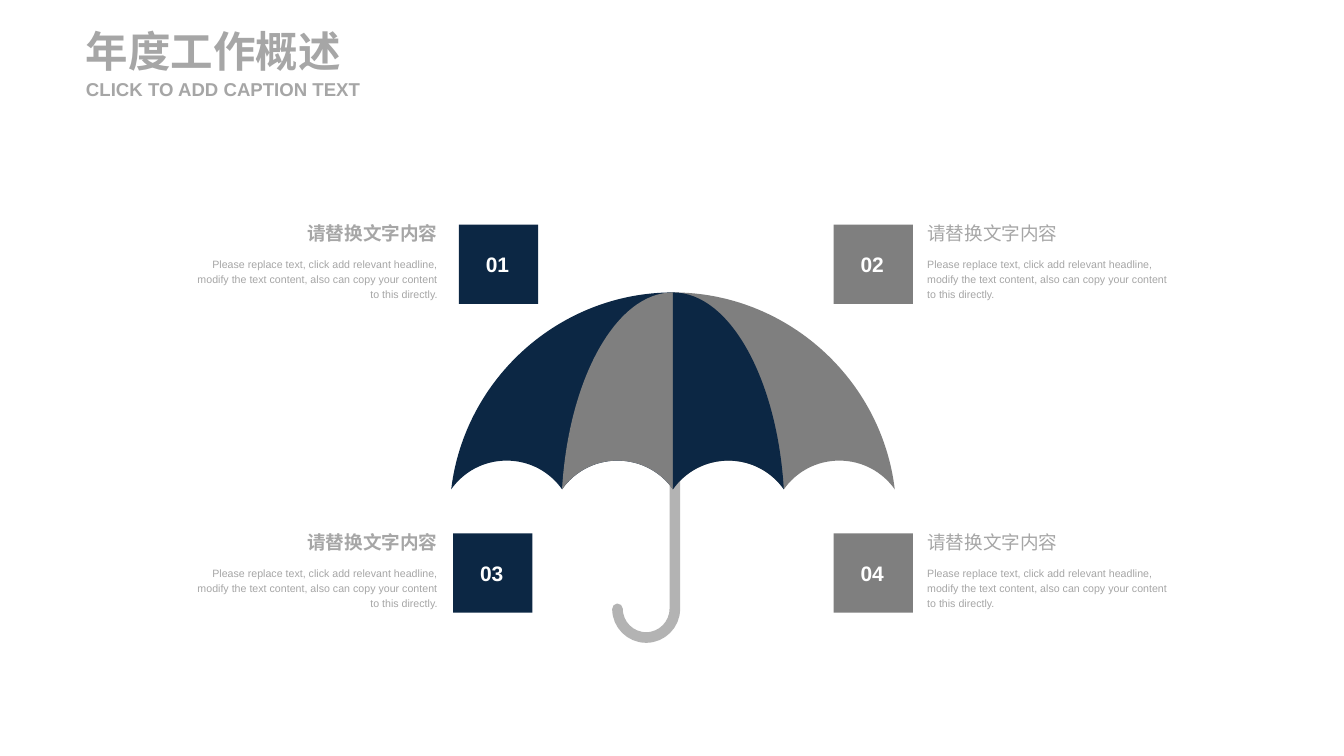
from lxml import etree
from pptx import Presentation
from pptx import util as u
from pptx.dml.color import RGBColor
from pptx.enum import shapes, text
from pptx.oxml import ns

THEME = dict(
    navy="0C2744", gray="7F7F7F", pale="A6A6A6", stem="B3B3B3", white="FFFFFF",
    font="Arial", title=32, head=14, body=8, num=15.8, rod=8,
)
TITLE = "年度工作概述"
CAPTION = "CLICK TO ADD CAPTION TEXT"
HEAD = "请替换文字内容"
BODY = ("Please replace text, click add relevant headline, modify the text content, "
        "also can copy your content to this directly.")
ITEMS = [
    ("01", "left", 4.8, 2.17),
    ("02", "right", 8.72, 2.17),
    ("03", "left", 4.74, 5.4),
    ("04", "right", 8.72, 5.4),
]
SIDES = {
    "left": dict(tone="navy", edge=4.58, head=1.5, body=2.6, tall=0.69, align="RIGHT", bold=True),
    "right": dict(tone="gray", edge=9.7, head=1.76, body=2.63, tall=0.67, align="LEFT", bold=False),
}
PANELS = [(1, 2, "gray"), (-1, 2, "navy"), (-1, 1, "gray"), (1, 1, "navy")]
MID, TOP, RIM, ARCH, RIB = 7.04, 3.06, 5.12, 4.82, 1.16
ROD, BEND, HOOK = 7.06, 6.37, 0.3
SIDE = 0.83

deck = Presentation()
deck.slide_width, deck.slide_height = u.Inches(14.06), u.Inches(7.91)
slide = deck.slides.add_slide(deck.slide_layouts[6])


def color(name):
    return RGBColor.from_string(THEME[name])


def apply(obj, **vals):
    for key, val in vals.items():
        setattr(obj, key, val)


def label(box, words, size, tone, bold=False, align="LEFT", anchor="TOP",
          pad=0, space=1.2, fit="NONE"):
    frame = slide.shapes.add_textbox(*map(u.Inches, box)).text_frame
    apply(frame, word_wrap=True, vertical_anchor=getattr(text.MSO_ANCHOR, anchor),
          auto_size=getattr(text.MSO_AUTO_SIZE, fit), margin_left=0, margin_right=0,
          margin_top=u.Inches(pad), margin_bottom=u.Inches(pad))
    para = frame.paragraphs[0]
    apply(para, alignment=getattr(text.PP_ALIGN, align), line_spacing=space)
    run = para.add_run()
    run.text = words
    apply(run.font, name=THEME["font"], size=u.Pt(THEME[size]), bold=bold)
    run.font.color.rgb = color(tone)


def paint(shape, tone):
    shape.shadow.inherit = False
    shape.fill.solid()
    shape.fill.fore_color.rgb = color(tone)
    shape.line.fill.background()


def outline(start, parts, close):
    dots = [(u.Inches(x), u.Inches(y)) for part in parts for x, y in part]
    form = slide.shapes.build_freeform(*map(u.Inches, start))
    form.add_line_segments(dots, close=close)
    shape = form.convert_to_shape()
    nodes = iter(list(shape._element.iter(ns.qn("a:lnTo"))))
    for part in parts:
        first, *rest = [next(nodes) for _ in part]
        if rest:
            first.tag = ns.qn("a:cubicBezTo")
        for node in rest:
            first.append(node[0])
            node.getparent().remove(node)
    return shape


def handle():
    low, mid, tip, bow = BEND + HOOK, ROD - HOOK, ROD - 2 * HOOK, 0.45 * HOOK
    rod = outline((tip, BEND), [
        [(tip, low - bow), (tip + bow, low), (mid, low)],
        [(ROD - bow, low), (ROD, low - bow), (ROD, BEND)],
        [(ROD, 3.99)],
    ], False)
    rod.shadow.inherit = False
    rod.fill.background()
    rod.line.color.rgb = color("stem")
    rod.line.width = u.Pt(THEME["rod"])
    line = rod.line._get_or_add_ln()
    line.set("cap", "rnd")
    etree.SubElement(line, ns.qn("a:round"))


def panel(sign, ribs, tone):
    reach = sign * ribs * RIB
    parts = [[(MID + 0.51 * reach, TOP), (MID + 0.94 * reach, 3.96), (MID + reach, RIM)]]
    step = -sign * RIB
    for rib in range(ribs, 0, -1):
        x = MID - rib * step
        parts += [
            [(x + 0.11 * step, 4.94), (x + 0.29 * step, ARCH), (x + 0.5 * step, ARCH)],
            [(x + 0.71 * step, ARCH), (x + 0.89 * step, 4.94), (x + step, RIM)],
        ]
    paint(outline((MID, TOP), parts, True), tone)


def item(num, side, x, y):
    look = SIDES[side]
    for kind, words, drop, high, pad, bold in (
        ("head", HEAD, 0, 0.39, 0.11, look["bold"]),
        ("body", BODY, 0.5, look["tall"], 0, False),
    ):
        left = look["edge"] - (look[kind] if side == "left" else 0)
        label((left, y + drop, look[kind], high), words, kind, "pale", bold=bold,
              align=look["align"], pad=pad)
    box = map(u.Inches, (x, y + 0.18, SIDE, SIDE))
    tile = slide.shapes.add_shape(shapes.MSO_SHAPE.ROUNDED_RECTANGLE, *box)
    tile.adjustments[0] = 0
    paint(tile, look["tone"])
    label((x + 0.07, y + 0.29, 0.67, 0.55), num, "num", "white", bold=True,
          align="CENTER", anchor="MIDDLE", pad=0.11)


handle()
for part in PANELS:
    panel(*part)
for entry in ITEMS:
    item(*entry)
for words, size, y, high in ((TITLE, "title", 0.26, 0.54), (CAPTION, "head", 0.81, 0.24)):
    label((0.9, y, 3.07, high), words, size, "pale", bold=True, anchor="MIDDLE",
          space=None, fit="SHAPE_TO_FIT_TEXT")

deck.save("out.pptx")
